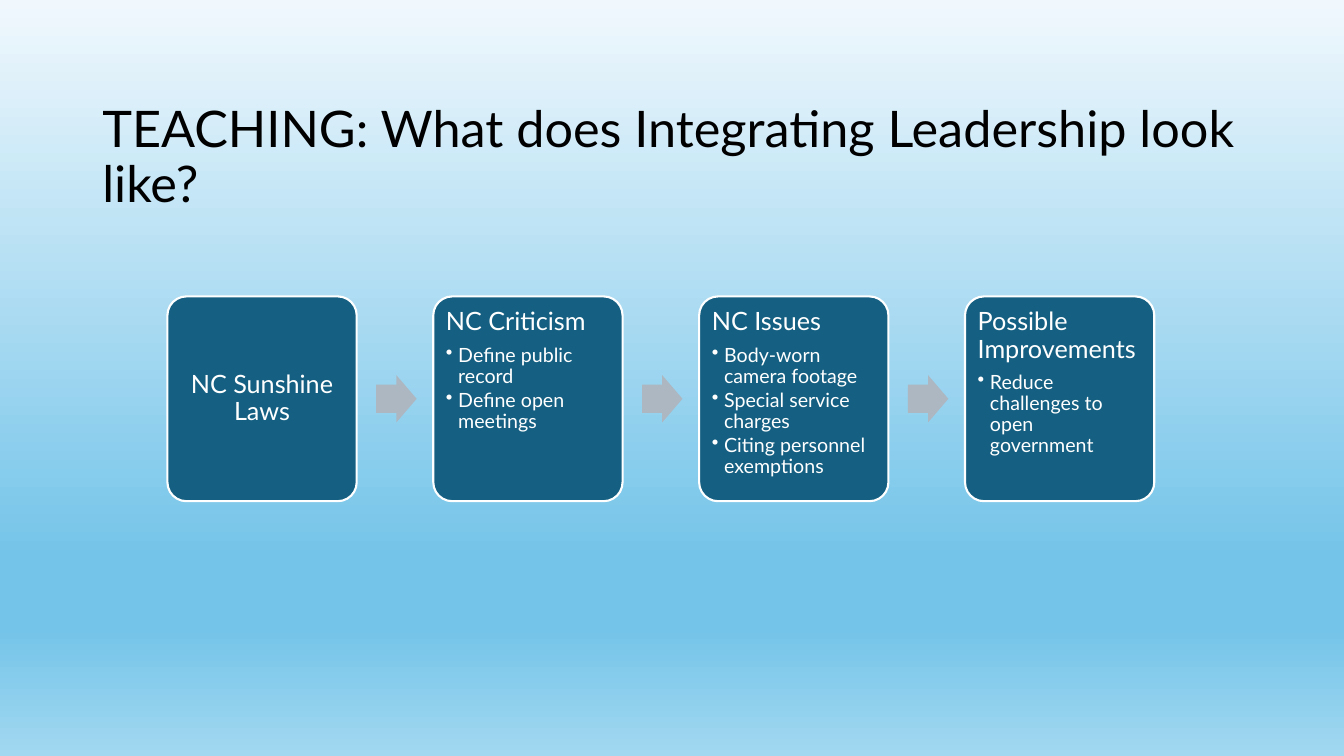
from lxml import etree
from pptx import Presentation
from pptx.dml.color import RGBColor
from pptx.enum.shapes import MSO_SHAPE
from pptx.enum.text import MSO_ANCHOR, PP_ALIGN
from pptx.oxml.ns import qn
from pptx.util import Cm, Pt

TITLE = "TEACHING: What does Integrating Leadership look like?"
STEPS = [
    ("NC Sunshine Laws", []),
    ("NC Criticism", ["Define public record", "Define open meetings"]),
    ("NC Issues", ["Body-worn camera footage", "Special service charges",
                   "Citing personnel exemptions"]),
    ("Possible Improvements", ["Reduce challenges to open government"]),
]
COLORS = {"text": "000000", "card": "156082", "edge": "FFFFFF", "arrow": "ACB7C1"}
SKY = [(0, "F0F8FD"), (74, "74C4E9"), (83, "74C4E9"), (100, "A2D8F0")]
FONT = "Lato"

CARD = MSO_SHAPE.ROUNDED_RECTANGLE
ARROW = MSO_SHAPE.RIGHT_ARROW
MIDDLE, TOP = MSO_ANCHOR.MIDDLE, MSO_ANCHOR.TOP
LEFT, CENTER = PP_ALIGN.LEFT, PP_ALIGN.CENTER

# Lengths in cm
CARD_X, CARD_Y, CARD_W, CARD_H = 4.22, 7.47, 4.77, 5.16
PITCH = 6.7
ARROW_DX, ARROW_W, ARROW_H = 5.26, 1.02, 1.19
INSET, INDENT = 0.18, 0.31


def rgb(name):
    return RGBColor.from_string(COLORS[name])


def paint_sky(slide):
    """Fill the background with the vertical gradient in SKY."""
    fill = slide.background.fill
    fill.gradient()
    fill.gradient_angle = 270
    stops = next(slide.element.iter(qn("a:gsLst")))
    for old in list(stops):
        stops.remove(old)
    for pct, tint in SKY:
        stop = etree.SubElement(stops, qn("a:gs"), pos=str(pct * 1000))
        etree.SubElement(stop, qn("a:srgbClr"), val=tint)


def write(para, text, size, color, after=0, align=LEFT, bullet=False):
    if bullet:
        props = para._p.get_or_add_pPr()
        props.set("marL", str(Cm(INDENT)))
        props.set("indent", str(-Cm(INDENT)))
        etree.SubElement(props, qn("a:buChar"), char="•")
    para.alignment = align
    para.line_spacing = 0.9
    para.space_after = Pt(after)
    run = para.add_run()
    run.text = text
    run.font.name = FONT
    run.font.size = Pt(size)
    run.font.color.rgb = rgb(color)


def add_block(slide, kind, x, y, w, h, color, *adjust):
    block = slide.shapes.add_shape(kind, Cm(x), Cm(y), Cm(w), Cm(h))
    block.shadow.inherit = False
    block.fill.solid()
    block.fill.fore_color.rgb = rgb(color)
    block.line.fill.background()
    for i, value in enumerate(adjust):
        block.adjustments[i] = value
    return block


def add_card(slide, x, head, points):
    card = add_block(slide, CARD, x, CARD_Y, CARD_W, CARD_H, "card", 0.1)
    card.line.color.rgb = rgb("edge")
    card.line.width = Pt(1.5)
    frame = card.text_frame
    frame.word_wrap = True
    frame.margin_left = frame.margin_right = Cm(INSET)
    frame.margin_top = frame.margin_bottom = Cm(INSET)
    frame.vertical_anchor = TOP if points else MIDDLE
    write(frame.paragraphs[0], head, 18, "edge", 6.3, LEFT if points else CENTER)
    for point in points:
        write(frame.add_paragraph(), point, 14, "edge", 2.1, bullet=True)


def main():
    deck = Presentation()
    deck.slide_width, deck.slide_height = Cm(33.87), Cm(19.05)
    slide = deck.slides.add_slide(deck.slide_layouts[6])
    paint_sky(slide)

    title = slide.shapes.add_textbox(Cm(2.33), Cm(2.16), Cm(29.21), Cm(3.68))
    title.text_frame.word_wrap = True
    title.text_frame.vertical_anchor = MIDDLE
    write(title.text_frame.paragraphs[0], TITLE, 36, "text")

    arrow_y = CARD_Y + (CARD_H - ARROW_H) / 2
    for i, (head, points) in enumerate(STEPS):
        x = CARD_X + i * PITCH
        add_card(slide, x, head, points)
        if i < len(STEPS) - 1:
            add_block(slide, ARROW, x + ARROW_DX, arrow_y, ARROW_W, ARROW_H,
                      "arrow", 0.6, 0.5)
    deck.save("out.pptx")


if __name__ == "__main__":
    main()
